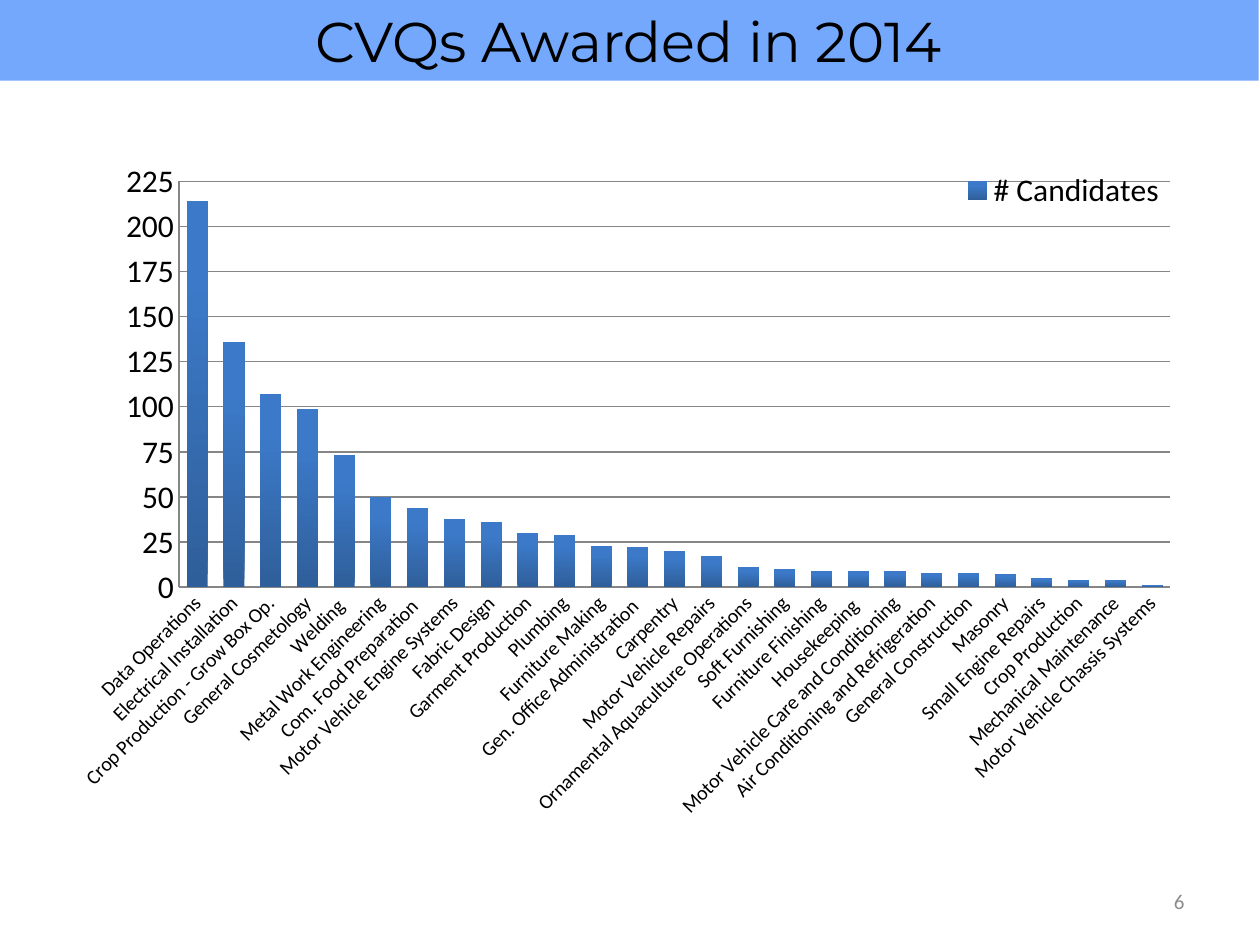
from lxml import etree
from pptx import Presentation
from pptx.chart.data import CategoryChartData
from pptx.dml.color import RGBColor
from pptx.enum.chart import XL_CHART_TYPE, XL_LEGEND_POSITION, XL_TICK_MARK
from pptx.enum.shapes import MSO_SHAPE
from pptx.enum.text import MSO_ANCHOR, PP_ALIGN
from pptx.oxml.ns import qn
from pptx.util import Inches, Pt

COLUMN = XL_CHART_TYPE.COLUMN_CLUSTERED
BOTTOM = XL_LEGEND_POSITION.BOTTOM
NO_TICK = XL_TICK_MARK.NONE
RECTANGLE = MSO_SHAPE.RECTANGLE
MIDDLE = MSO_ANCHOR.MIDDLE
CENTER = PP_ALIGN.CENTER
RIGHT = PP_ALIGN.RIGHT

CHART_WIDTH, CHART_HEIGHT = 9, 5.92

COLORS = {
    "banner": "74A8FC",
    "text": "000000",
    "number": "8C8C8C",
    "grid": "868686",
    "bar_bottom": "2F5F9A",
    "bar_top": "3C7AC9",
}

CANDIDATES = [
    ("Data Operations", 214),
    ("Electrical Installation", 136),
    ("Crop Production - Grow Box Op.", 107),
    ("General Cosmetology", 99),
    ("Welding ", 73),
    ("Metal Work Engineering", 50),
    ("Com. Food Preparation ", 44),
    ("Motor Vehicle Engine Systems", 38),
    ("Fabric Design", 36),
    ("Garment Production", 30),
    ("Plumbing", 29),
    ("Furniture Making", 23),
    ("Gen. Office Administration ", 22),
    ("Carpentry", 20),
    ("Motor Vehicle Repairs", 17),
    ("Ornamental Aquaculture Operations", 11),
    ("Soft Furnishing", 10),
    ("Furniture Finishing", 9),
    ("Housekeeping ", 9),
    ("Motor Vehicle Care and Conditioning", 9),
    ("Air Conditioning and Refrigeration", 8),
    ("General Construction", 8),
    ("Masonry", 7),
    ("Small Engine Repairs", 5),
    ("Crop Production", 4),
    ("Mechanical Maintenance", 4),
    ("Motor Vehicle Chassis Systems", 1),
]


def color(name):
    """Return a palette colour."""
    return RGBColor.from_string(COLORS[name])


def style_font(font, size, name, face="Calibri"):
    """Set size, colour and typeface of a font."""
    font.size = Pt(size)
    font.name = face
    font.color.rgb = color(name)


def write_text(shape, text, align, size, name, face="Calibri"):
    """Fill a shape with one vertically centred line of text."""
    frame = shape.text_frame
    frame.word_wrap = True
    frame.vertical_anchor = MIDDLE
    frame.text = text
    para = frame.paragraphs[0]
    para.alignment = align
    style_font(para.runs[0].font, size, name, face)


def place_part(part, index, inner, left, top, width, height):
    """Place a chart part by inches from the chart's top left corner."""
    for old in part.findall(qn("c:layout")):
        part.remove(old)
    layout = etree.Element(qn("c:layout"))
    manual = etree.SubElement(layout, qn("c:manualLayout"))
    settings = {"layoutTarget": "inner"} if inner else {}
    settings.update(
        xMode="edge",
        yMode="edge",
        x=left / CHART_WIDTH,
        y=top / CHART_HEIGHT,
        w=width / CHART_WIDTH,
        h=height / CHART_HEIGHT,
    )
    for tag, value in settings.items():
        etree.SubElement(manual, qn(f"c:{tag}")).set("val", str(value))
    part.insert(index, layout)


def style_axes(chart):
    """Format the slanted category labels and the value gridlines."""
    categories, values = chart.category_axis, chart.value_axis
    values.has_major_gridlines = True
    for axis in (categories, values):
        axis.major_tick_mark = NO_TICK
        axis.minor_tick_mark = NO_TICK
    for part in (categories, values, values.major_gridlines):
        part.format.line.color.rgb = color("grid")
        part.format.line.width = Pt(0.75)
    style_font(categories.tick_labels.font, 11.5, "text")
    body = categories._element.find(qn("c:txPr")).find(qn("a:bodyPr"))
    body.set("rot", "-2700000")
    style_font(values.tick_labels.font, 18, "text")
    values.minimum_scale, values.maximum_scale = 0, 225
    values.major_unit = 25


def style_bars(plot):
    """Set bar spacing and the vertical gradient."""
    plot.gap_width, plot.overlap = 75, -25
    plot.vary_by_categories = False
    fill = plot.series[0].format.fill
    fill.gradient()
    fill.gradient_angle = 90
    stops = zip(fill.gradient_stops, ("bar_bottom", "bar_top"), (0, 0.8))
    for stop, name, position in stops:
        stop.color.rgb = color(name)
        stop.position = position


def add_candidates_chart(page):
    """Add the column chart of candidates per qualification."""
    data = CategoryChartData()
    names, counts = zip(*CANDIDATES)
    data.categories = names
    data.add_series("# Candidates", counts)
    chart = page.shapes.add_chart(
        COLUMN, Inches(0.5), Inches(1.17),
        Inches(CHART_WIDTH), Inches(CHART_HEIGHT), data,
    ).chart
    chart.has_title = False
    style_font(chart.font, 18, "text")
    style_axes(chart)
    style_bars(chart.plots[0])
    chart.has_legend = True
    legend = chart.legend
    legend.position = BOTTOM
    legend.include_in_layout = False
    style_font(legend.font, 18, "text")
    place_part(legend._element, 1, False, 7.13, 0.14, 1.62, 0.41)
    plot_area = chart.plots[0]._element.getparent()
    place_part(plot_area, 0, True, 0.92, 0.27, 7.87, 3.22)


def add_banner(page, title):
    """Add the coloured title band."""
    banner = page.shapes.add_shape(
        RECTANGLE, Inches(-0.01), 0, Inches(10), Inches(0.64)
    )
    banner.shadow.inherit = False
    banner.fill.solid()
    banner.fill.fore_color.rgb = color("banner")
    banner.line.fill.background()
    write_text(banner, title, CENTER, 32, "text", "Montserrat")


def add_page_number(page, number):
    """Add the page number at the lower right."""
    box = page.shapes.add_textbox(
        Inches(7.17), Inches(6.95), Inches(2.33), Inches(0.4)
    )
    write_text(box, number, RIGHT, 12, "number")


def main():
    """Build and save the slide."""
    deck = Presentation()
    deck.slide_width, deck.slide_height = Inches(10), Inches(7.5)
    page = deck.slides.add_slide(deck.slide_layouts[6])
    add_candidates_chart(page)
    add_page_number(page, "6")
    add_banner(page, "CVQs Awarded in 2014")
    deck.save("out.pptx")


if __name__ == "__main__":
    main()
